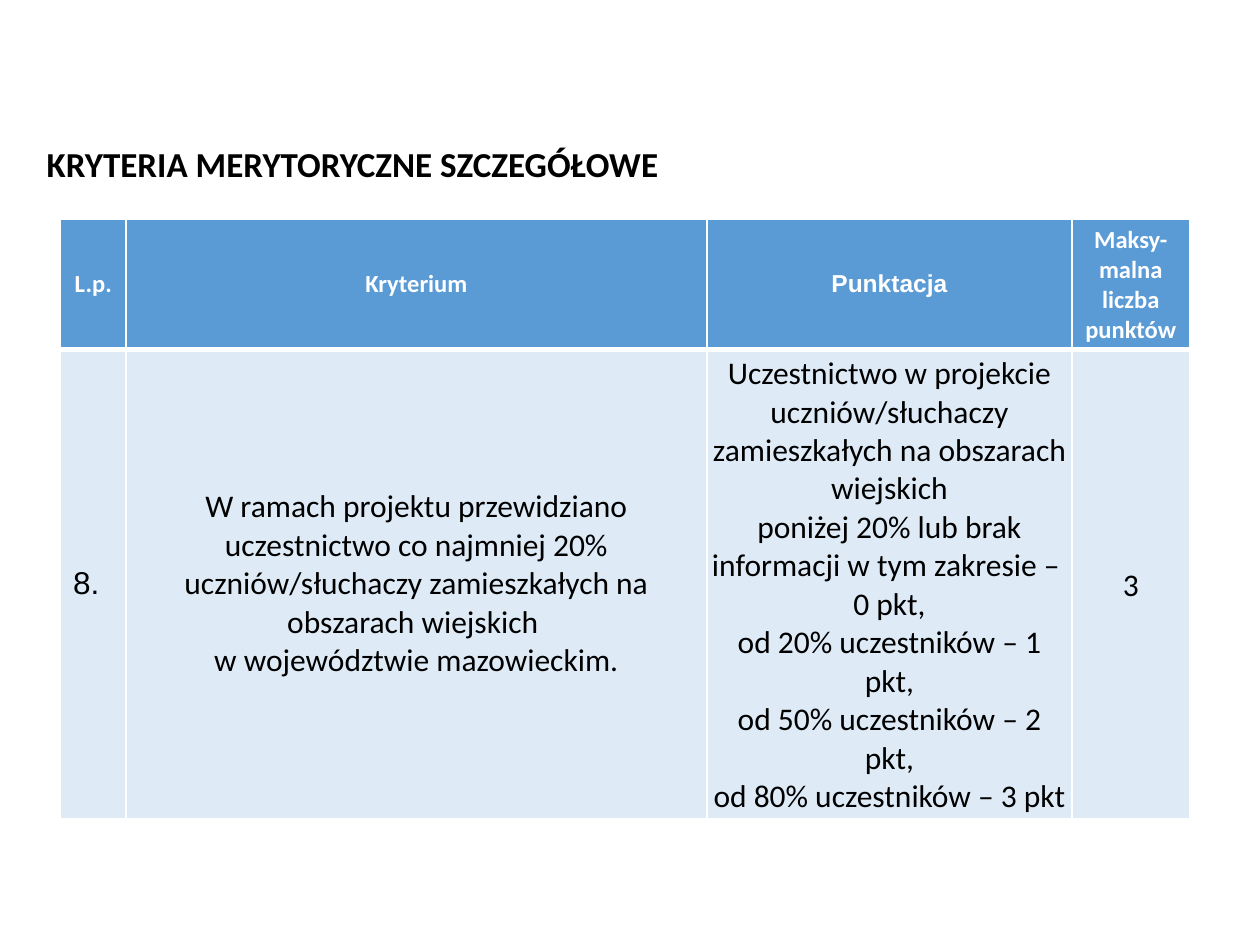
import pptx
import pptx.dml.color
import pptx.enum.text
import pptx.oxml.ns
import pptx.util
from lxml import etree

WIDTH = pptx.util.Inches(10)
HEIGHT = pptx.util.Inches(7.5)
HEADER_FILL = "5B9BD5"
BODY_FILL = "DEEBF7"
WHITE = "FFFFFF"
BLACK = "000000"
CENTER = pptx.enum.text.PP_ALIGN.CENTER
LEFT = pptx.enum.text.PP_ALIGN.LEFT
MIDDLE = pptx.enum.text.MSO_ANCHOR.MIDDLE

COLUMN_PERCENTS = [5.2, 46.1, 29, 9.3]
ROW_PERCENTS = [13.2, 49.6]
HEADINGS = ["L.p.", "Kryterium", "Punktacja", "Maksy-malna liczba punktów"]
HEADING_FONTS = ["Calibri", "Calibri", "Arial", "Calibri"]
CRITERION = (
    "W ramach projektu przewidziano uczestnictwo co najmniej 20% "
    "uczniów/słuchaczy zamieszkałych na obszarach wiejskich \n"
    "w województwie mazowieckim."
)
SCORING = [
    "Uczestnictwo w projekcie uczniów/słuchaczy zamieszkałych na obszarach wiejskich",
    "poniżej 20% lub brak informacji w tym zakresie – \n0 pkt,",
    "od 20% uczestników – 1 pkt,",
    "od 50% uczestników – 2 pkt,",
    "od 80% uczestników – 3 pkt",
]


def across(percent):
    return round(WIDTH * percent / 100)


def down(percent):
    return round(HEIGHT * percent / 100)


def color(value):
    return pptx.dml.color.RGBColor.from_string(value)


def write(frame, lines, size, font, ink, bold, align):
    for index, line in enumerate(lines):
        paragraph = frame.paragraphs[0] if index == 0 else frame.add_paragraph()
        paragraph.text = line
        paragraph.alignment = align
        paragraph.font.size = pptx.util.Pt(size)
        paragraph.font.name = font
        paragraph.font.bold = bold
        paragraph.font.color.rgb = color(ink)


def set_borders(cell, top, bottom):
    properties = cell._tc.get_or_add_tcPr()
    for edge, points in {"lnL": 1, "lnR": 1, "lnT": top, "lnB": bottom}.items():
        line = etree.SubElement(
            properties, pptx.oxml.ns.qn(f"a:{edge}"), w=str(pptx.util.Pt(points))
        )
        fill = etree.SubElement(line, pptx.oxml.ns.qn("a:solidFill"))
        etree.SubElement(fill, pptx.oxml.ns.qn("a:srgbClr"), val=WHITE)


def style_cell(cell, fill, top, bottom):
    set_borders(cell, top, bottom)
    cell.fill.solid()
    cell.fill.fore_color.rgb = color(fill)
    cell.vertical_anchor = MIDDLE


def add_title(slide):
    title = slide.shapes.title
    title.left, title.top = across(2.7), down(14.4)
    title.width, title.height = across(51.8), down(5.9)
    frame = title.text_frame
    frame.word_wrap = False
    frame.auto_size = pptx.enum.text.MSO_AUTO_SIZE.SHAPE_TO_FIT_TEXT
    frame.vertical_anchor = MIDDLE
    write(frame, ["KRYTERIA MERYTORYCZNE SZCZEGÓŁOWE"], 20, "Calibri", BLACK, True, LEFT)


def fill_header(table):
    for column, (heading, font) in enumerate(zip(HEADINGS, HEADING_FONTS)):
        cell = table.cell(0, column)
        style_cell(cell, HEADER_FILL, 1, 3)
        write(cell.text_frame, [heading], 14, font, WHITE, True, CENTER)


def fill_criterion(table):
    contents = [["8."], [CRITERION], SCORING, ["3"]]
    for column, lines in enumerate(contents):
        cell = table.cell(1, column)
        style_cell(cell, BODY_FILL, 3, 1)
        numbering = column == 0
        if not numbering:
            inset = pptx.util.Inches(0.04)
            cell.margin_left = cell.margin_right = inset
            cell.margin_top = cell.margin_bottom = inset
        font, align = ("Arial", LEFT) if numbering else ("Calibri", CENTER)
        write(cell.text_frame, lines, 18, font, BLACK, False, align)
    table.cell(1, 3).text_frame.paragraphs[0].line_spacing = 1.07


def add_criteria_table(slide):
    table = slide.shapes.add_table(
        len(ROW_PERCENTS), len(COLUMN_PERCENTS), across(4.8), down(23.2),
        across(sum(COLUMN_PERCENTS)), down(sum(ROW_PERCENTS)),
    ).table
    for column, percent in zip(table.columns, COLUMN_PERCENTS):
        column.width = across(percent)
    for row, percent in zip(table.rows, ROW_PERCENTS):
        row.height = down(percent)
    fill_header(table)
    fill_criterion(table)


def main():
    presentation = pptx.Presentation()
    presentation.slide_width = WIDTH
    presentation.slide_height = HEIGHT
    slide = presentation.slides.add_slide(presentation.slide_layouts[5])
    add_criteria_table(slide)
    add_title(slide)
    presentation.save("out.pptx")


if __name__ == "__main__":
    main()
